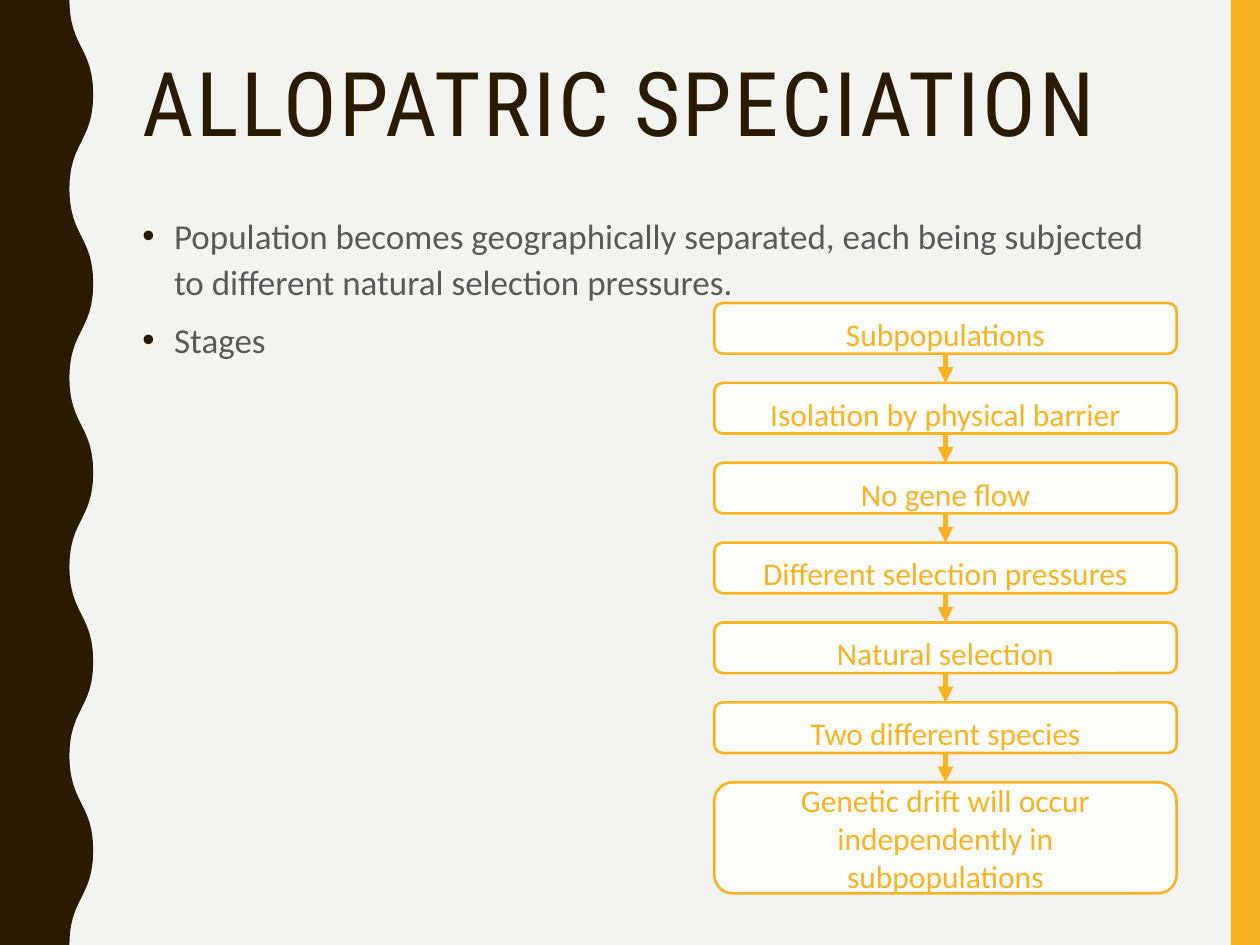
from typing import NamedTuple

from lxml import etree
from pptx import Presentation
from pptx.dml.color import RGBColor
from pptx.enum.shapes import MSO_CONNECTOR, MSO_SHAPE
from pptx.enum.text import MSO_ANCHOR, PP_ALIGN
from pptx.oxml.ns import qn
from pptx.util import Cm, Pt

ROUNDED = MSO_SHAPE.ROUNDED_RECTANGLE
RECTANGLE = MSO_SHAPE.RECTANGLE
STRAIGHT = MSO_CONNECTOR.STRAIGHT
TOP, MIDDLE = MSO_ANCHOR.TOP, MSO_ANCHOR.MIDDLE
CENTER = PP_ALIGN.CENTER
BOTTOM_SITE, TOP_SITE = 2, 0

PAPER = RGBColor(0xF3, 0xF3, 0xF2)
BROWN = RGBColor(0x2A, 0x1A, 0x00)
AMBER = RGBColor(0xF8, 0xB3, 0x23)
GREY = RGBColor(0x59, 0x59, 0x59)
BOX_FILL = RGBColor(0xFD, 0xFD, 0xFC)

WIDTH, HEIGHT = 25.4, 19.05
TEXT_LEFT, TEXT_WIDTH = 2.62, 21.21
WAVE_INNER, WAVE_OUTER, HALF_WAVES, WAVE_STEPS = 1.4, 1.88, 10, 12
STAGE_LEFT, STAGE_TOP, STAGE_WIDTH, STAGE_PITCH = 14.4, 6.11, 9.32, 1.61


class Stage(NamedTuple):
    text: str
    height: float = 1.02
    top_inset: float = 0.22


STAGES = [
    Stage("Subpopulations"),
    Stage("Isolation by physical barrier"),
    Stage("No gene flow"),
    Stage("Different selection pressures"),
    Stage("Natural selection"),
    Stage("Two different species"),
    Stage("Genetic drift will occur independently in subpopulations", 2.24, 0),
]
POINTS = [
    "Population becomes geographically separated, each being subjected "
    "to different natural selection pressures.",
    "Stages",
]


def fill_plain(sp, color: RGBColor) -> None:
    sp.shadow.inherit = False
    sp.fill.solid()
    sp.fill.fore_color.rgb = color
    sp.line.fill.background()


def format_runs(p, font: str, size: float, color: RGBColor) -> None:
    for r in p.runs:
        r.font.name = font
        r.font.size = Pt(size)
        r.font.color.rgb = color


def add_wave(slide) -> None:
    """Draw the left band, whose right edge is a row of smooth half waves."""
    step = HEIGHT / HALF_WAVES
    edge = []
    for i in range(HALF_WAVES):
        start, end = ((WAVE_INNER, WAVE_OUTER) if i % 2 == 0
                      else (WAVE_OUTER, WAVE_INNER))
        for k in range(1, WAVE_STEPS + 1):
            t = k / WAVE_STEPS
            x = start + (end - start) * (3 * t**2 - 2 * t**3)
            y = step * (i + 1.5 * t * (1 - t) + t**3)
            edge.append((Cm(x), Cm(y)))
    builder = slide.shapes.build_freeform(0, 0)
    builder.add_line_segments([(Cm(WAVE_INNER), 0), *edge, (0, Cm(HEIGHT))])
    fill_plain(builder.convert_to_shape(), BROWN)


def add_text_frame(slide, top: float, height: float):
    sp = slide.shapes.add_textbox(
        Cm(TEXT_LEFT), Cm(top), Cm(TEXT_WIDTH), Cm(height))
    tf = sp.text_frame
    tf.word_wrap = True
    tf.vertical_anchor = TOP
    return tf


def add_title(slide) -> None:
    p = add_text_frame(slide, 1.07, 4.17).paragraphs[0]
    p.text = "ALLOPATRIC SPECIATION"
    p.line_spacing = 0.9
    format_runs(p, "Roboto Condensed", 51, BROWN)
    p.runs[0].font._element.set("spc", "150")


def add_bullet(p) -> None:
    pPr = p._p.get_or_add_pPr()
    pPr.set("marL", str(Cm(0.64)))
    pPr.set("indent", str(-Cm(0.64)))
    color = etree.SubElement(pPr, qn("a:buClr"))
    etree.SubElement(color, qn("a:srgbClr"), val=str(BROWN))
    etree.SubElement(pPr, qn("a:buFont"), typeface="Arial")
    etree.SubElement(pPr, qn("a:buChar"), char="•")


def add_points(slide) -> None:
    tf = add_text_frame(slide, 4.11, 9.98)
    tf.text = "\n".join(POINTS)
    for p in tf.paragraphs:
        p.line_spacing = 1.1
        p.space_before = Pt(7)
        add_bullet(p)
        format_runs(p, "Calibri", 20, GREY)


def add_stage(slide, stage: Stage, top: float):
    sp = slide.shapes.add_shape(
        ROUNDED, Cm(STAGE_LEFT), Cm(top), Cm(STAGE_WIDTH), Cm(stage.height))
    fill_plain(sp, BOX_FILL)
    sp.line.color.rgb = AMBER
    sp.line.width = Pt(1.5)
    tf = sp.text_frame
    tf.word_wrap = True
    tf.vertical_anchor = MIDDLE
    tf.margin_left = tf.margin_right = Cm(0.45)
    tf.margin_top, tf.margin_bottom = Cm(stage.top_inset), 0
    tf.text = stage.text
    p = tf.paragraphs[0]
    p.alignment = CENTER
    format_runs(p, "Calibri", 18, AMBER)
    return sp


def add_arrow(slide, upper, lower) -> None:
    arrow = slide.shapes.add_connector(STRAIGHT, 0, 0, 0, 0)
    arrow.begin_connect(upper, BOTTOM_SITE)
    arrow.end_connect(lower, TOP_SITE)
    arrow.line.color.rgb = AMBER
    arrow.line.width = Pt(3)
    etree.SubElement(arrow.line._get_or_add_ln(), qn("a:tailEnd"),
                     type="triangle")
    etree.SubElement(arrow._element.spPr, qn("a:effectLst"))


def main() -> None:
    prs = Presentation()
    prs.slide_width, prs.slide_height = Cm(WIDTH), Cm(HEIGHT)
    slide = prs.slides.add_slide(prs.slide_layouts[6])
    slide.background.fill.solid()
    slide.background.fill.fore_color.rgb = PAPER

    band = slide.shapes.add_shape(
        RECTANGLE, Cm(24.82), 0, Cm(0.58), Cm(HEIGHT))
    fill_plain(band, AMBER)
    add_wave(slide)
    add_title(slide)
    add_points(slide)

    boxes = [add_stage(slide, stage, STAGE_TOP + i * STAGE_PITCH)
             for i, stage in enumerate(STAGES)]
    for upper, lower in zip(boxes, boxes[1:]):
        add_arrow(slide, upper, lower)

    prs.save("out.pptx")


if __name__ == "__main__":
    main()
